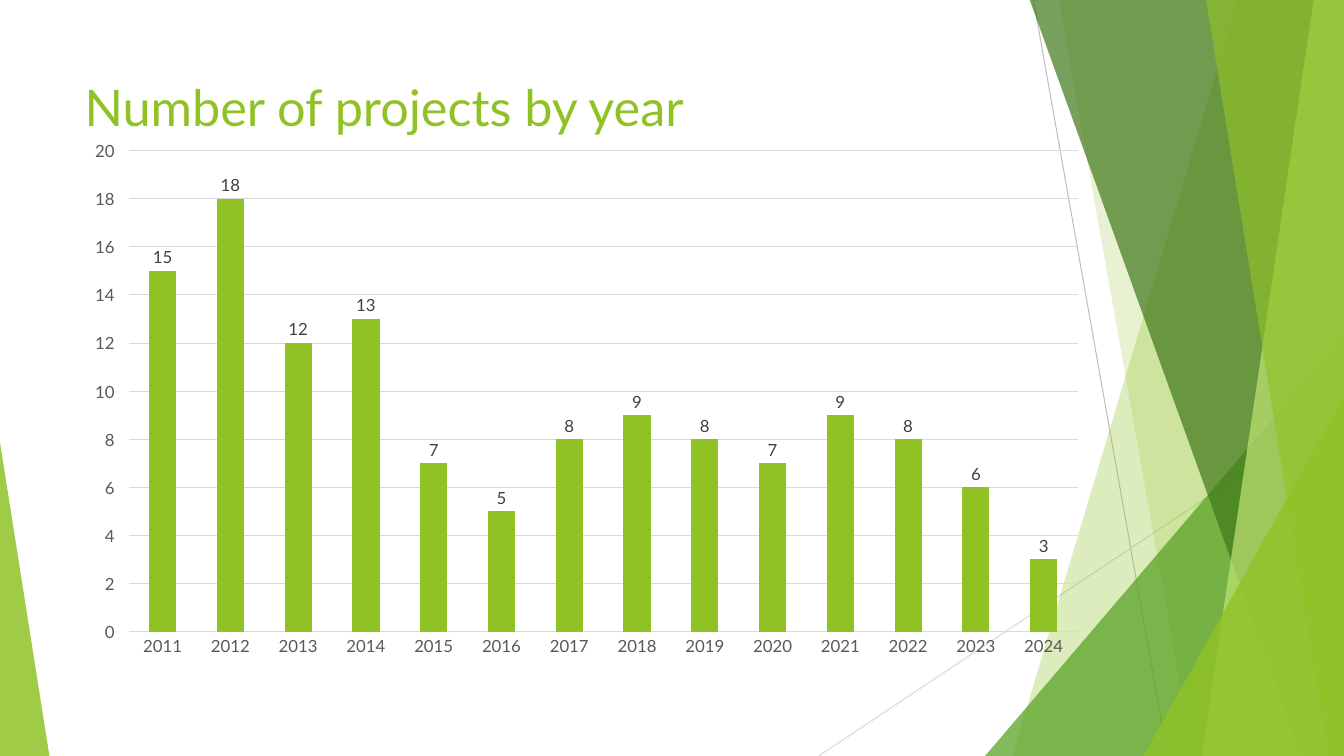
import pptx
import pptx.chart.data
import pptx.dml.color
import pptx.enum.chart
import pptx.enum.shapes
import pptx.enum.text
import pptx.oxml
import pptx.oxml.ns
import pptx.util

Inches = pptx.util.Inches
Pt = pptx.util.Pt
FONT = "Lato"
GREEN = "90C226"
GRID = "D9D9D9"
SLIDE_BOX = (0, 0, 13.33, 7.5)
TITLE_BOX = (0.74, 0.67, 9.4, 0.77)
CHART_BOX = (0.74, 1.29, 10.15, 5.32)
PROJECTS = dict(zip(range(2011, 2025),
                    [15, 18, 12, 13, 7, 5, 8, 9, 8, 7, 9, 8, 6, 3]))


def rgb(color):
    return pptx.dml.color.RGBColor.from_string(color)


def style_font(font, size, color):
    font.name = FONT
    font.size = Pt(size)
    font.color.rgb = rgb(color)


def style_line(line, color):
    line.color.rgb = rgb(color)
    line.width = Pt(0.75)


def paint(facet, color, opacity):
    facet.shadow.inherit = False
    facet.fill.solid()
    facet.fill.fore_color.rgb = rgb(color)
    facet.line.fill.background()
    srgb = facet.fill._xPr.find(".//" + pptx.oxml.ns.qn("a:srgbClr"))
    alpha = srgb.makeelement(pptx.oxml.ns.qn("a:alpha"), {"val": str(opacity * 1000)})
    srgb.append(alpha)


def add_ray(slide, box, start, end, color):
    left, top = box[:2]
    ray = slide.shapes.add_connector(
        pptx.enum.shapes.MSO_CONNECTOR.STRAIGHT,
        Inches(left + start[0]), Inches(top + start[1]),
        Inches(left + end[0]), Inches(top + end[1]))
    style_line(ray.line, color)
    properties = ray._element.spPr
    properties.append(properties.makeelement(pptx.oxml.ns.qn("a:effectLst"), {}))


def add_band(slide, box, top_x, bottom_x, color, opacity):
    left, top, width, height = box
    corners = [(top_x, -0.01), (width, -0.01), (width, height), (bottom_x, height)]
    points = [(Inches(left + x), Inches(top + y)) for x, y in corners]
    builder = slide.shapes.build_freeform(*points[0], scale=1.0)
    builder.add_line_segments(points[1:], close=True)
    paint(builder.convert_to_shape(), color, opacity)


def add_corner(slide, box, x, width, height, apex, color, opacity):
    left, top, _, box_height = box
    corner = slide.shapes.add_shape(
        pptx.enum.shapes.MSO_SHAPE.ISOSCELES_TRIANGLE,
        Inches(left + x), Inches(top + box_height - height),
        Inches(width), Inches(height))
    corner.adjustments[0] = apex
    paint(corner, color, opacity)


def add_backdrop(slide, box):
    width, height = box[2:]
    add_ray(slide, box, (10.25, 0), (11.58, height), "BFBFBF")
    add_ray(slide, box, (width, 4.03), (8.12, height), GRID)
    add_band(slide, box, 12.28, 10.04, GREEN, 30)
    add_band(slide, box, 10.5, 11.83, GREEN, 20)
    add_corner(slide, box, width - 3.56, 3.56, 4.17, 1, "54A021", 72)
    add_band(slide, box, 10.21, 12.91, "3F7819", 70)
    add_band(slide, box, 13.03, 11.92, "C0E474", 70)
    add_band(slide, box, 11.96, 13.18, GREEN, 65)
    add_corner(slide, box, width - 1.99, 1.99, 3.57, 1, GREEN, 80)
    add_corner(slide, box, 0, 0.49, 3.11, 0, GREEN, 85)


def add_title(slide, box):
    frame = slide.shapes.add_textbox(*map(Inches, box)).text_frame
    frame.word_wrap = True
    frame.vertical_anchor = pptx.enum.text.MSO_ANCHOR.MIDDLE
    heading = frame.paragraphs[0]
    heading.text = "Number of projects by year"
    style_font(heading.font, 36, GREEN)


def clear_background(chart):
    blank = ('<c:spPr %s><a:noFill/><a:ln><a:noFill/></a:ln></c:spPr>'
             % pptx.oxml.ns.nsdecls("c", "a"))
    space = chart._chartSpace
    space.chart.addnext(pptx.oxml.parse_xml(blank))
    space.chart.plotArea.append(pptx.oxml.parse_xml(blank))


def add_project_chart(slide, box):
    projects = pptx.chart.data.CategoryChartData()
    projects.categories = [str(year) for year in PROJECTS]
    projects.add_series("Series 1", list(PROJECTS.values()))
    chart = slide.shapes.add_chart(
        pptx.enum.chart.XL_CHART_TYPE.COLUMN_CLUSTERED,
        *map(Inches, box), projects).chart
    chart.has_legend = False
    chart.has_title = False
    style_font(chart.font, 10, "000000")
    clear_background(chart)

    years, counts = chart.category_axis, chart.value_axis
    for axis in (years, counts):
        axis.major_tick_mark = pptx.enum.chart.XL_TICK_MARK.NONE
        axis.minor_tick_mark = pptx.enum.chart.XL_TICK_MARK.NONE
        style_font(axis.tick_labels.font, 12, "595959")
    style_line(years.format.line, GRID)
    counts.minimum_scale = 0
    counts.maximum_scale = 20
    counts.major_unit = 2
    counts.format.line.fill.background()
    style_line(counts.major_gridlines.format.line, GRID)
    counts.tick_label_position = pptx.enum.chart.XL_TICK_LABEL_POSITION.LOW
    counts.tick_labels.number_format = r"#,##0_);[Red]\(#,##0\)"
    counts.tick_labels.number_format_is_linked = False

    plot = chart.plots[0]
    plot.gap_width = 150
    plot.vary_by_categories = False
    columns = plot.series[0]
    columns.format.fill.solid()
    columns.format.fill.fore_color.rgb = rgb(GREEN)
    labels = columns.data_labels
    labels.show_value = True
    labels.position = pptx.enum.chart.XL_LABEL_POSITION.OUTSIDE_END
    style_font(labels.font, 12, "404040")


def main():
    deck = pptx.Presentation()
    deck.slide_width, deck.slide_height = map(Inches, SLIDE_BOX[2:])
    slide = deck.slides.add_slide(deck.slide_layouts[6])
    add_backdrop(slide, SLIDE_BOX)
    add_title(slide, TITLE_BOX)
    add_project_chart(slide, CHART_BOX)
    deck.save("out.pptx")


if __name__ == "__main__":
    main()
